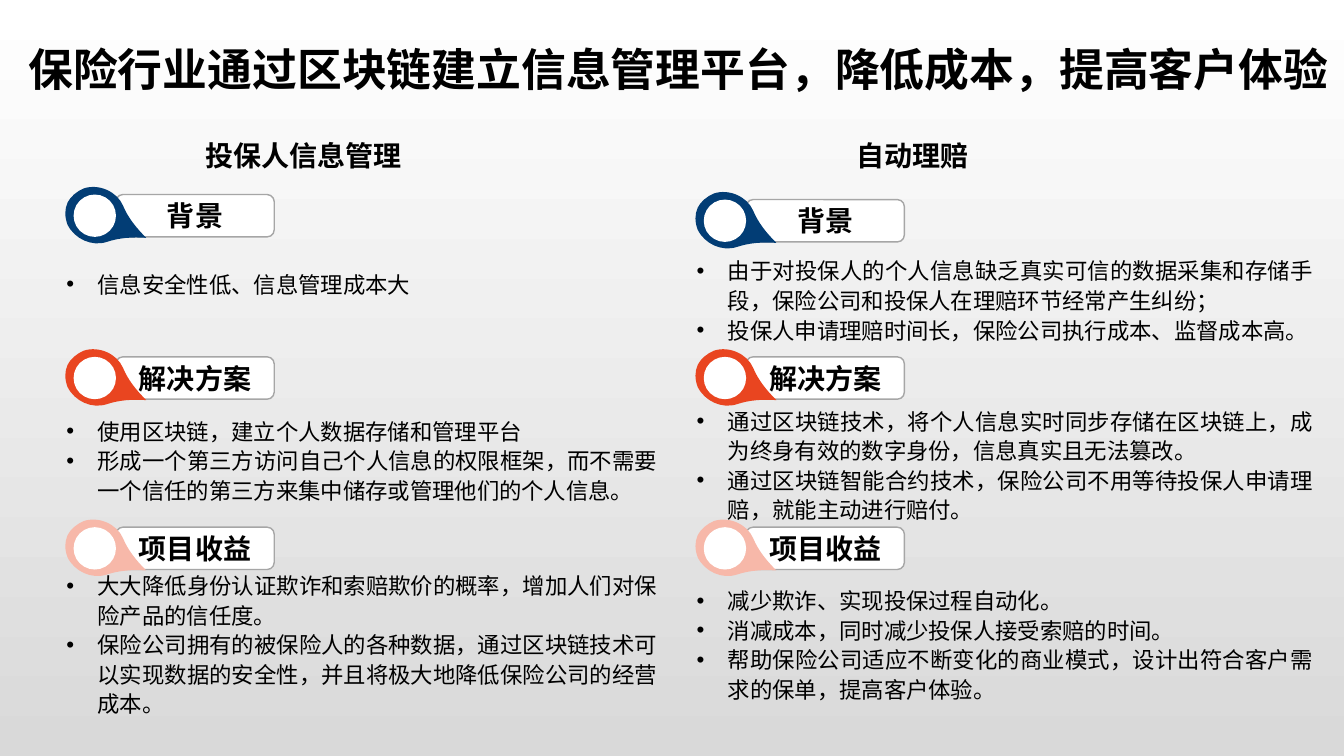
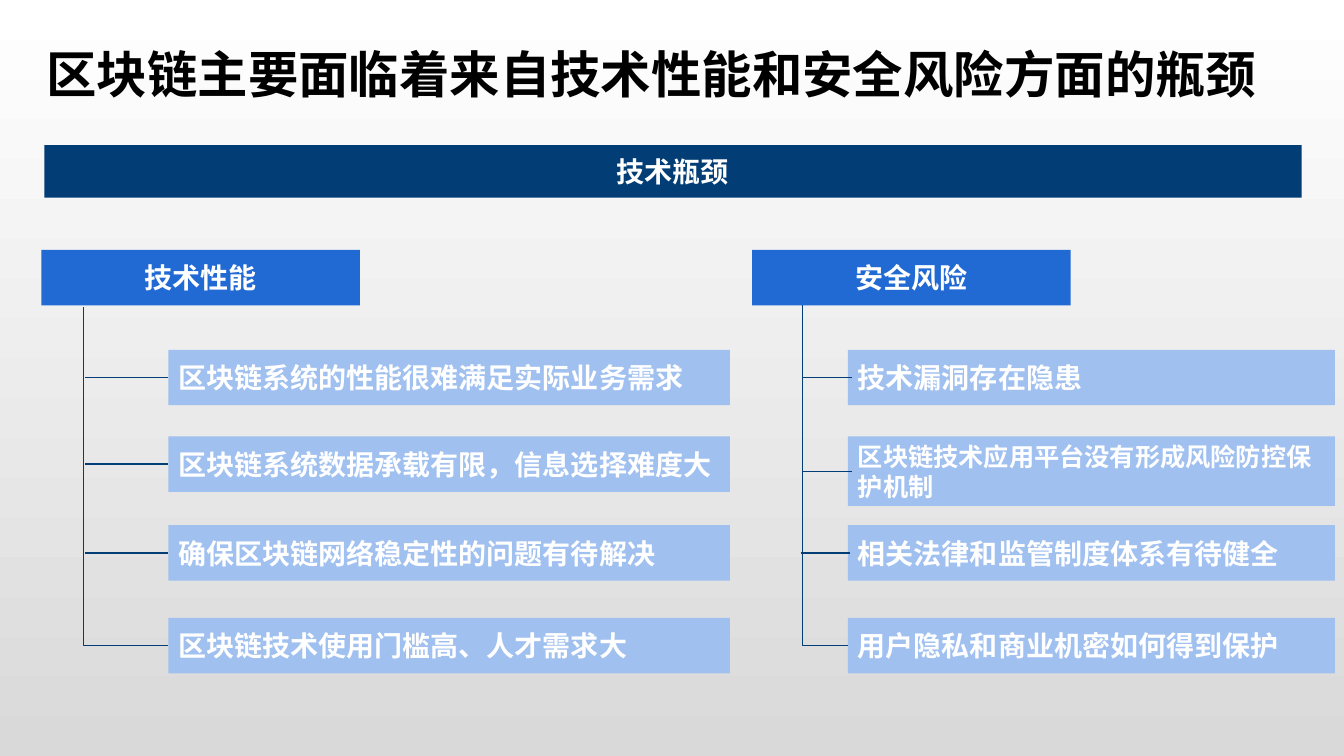
from dataclasses import dataclass

from lxml import etree
from pptx import Presentation
from pptx import util as u
from pptx.dml.color import RGBColor
from pptx.enum import shapes, text
from pptx.oxml.ns import qn


@dataclass(frozen=True)
class Theme:
    font: str = "Noto Sans CJK SC"
    bullet_font: str = "Arial"
    black: str = "000000"
    white: str = "FFFFFF"
    haze: str = "D9D9D9"
    outline: str = "A6A6A6"
    navy: str = "023D75"
    blue: str = "2169D3"
    pale_blue: str = "A0C0F0"
    red: str = "E94520"
    pink: str = "F7B8A9"
    heading: int = 20
    dense: int = 18
    body: int = 16


THEME = Theme()
ALIGN = text.PP_ALIGN
SHAPE = shapes.MSO_SHAPE

DROP_START = (-0.48, 0.08)
DROP_CURVES = [
    ((-0.45, 0.02), (-0.39, -0.03), (-0.32, -0.06)),
    ((-0.17, -0.11), (0.01, -0.03), (0.07, 0.11)),
    ((0.12, 0.23), (0.2, 0.33), (0.3, 0.43)),
    ((0.16, 0.42), (0.03, 0.43), (-0.09, 0.47)),
    ((-0.24, 0.52), (-0.41, 0.44), (-0.48, 0.3)),
    ((-0.51, 0.22), (-0.51, 0.15), DROP_START),
]

SECTIONS = [("背景", THEME.navy), ("解决方案", THEME.red), ("项目收益", THEME.pink)]
USE_CASES = [
    {
        "heading": ("投保人信息管理", 1.94),
        "label_left": 1.15,
        "label_tops": (1.93, 3.54, 5.23),
        "body_left": 0.56,
        "body_width": 6.06,
        "bodies": [
            (2.61, 0.4, ["信息安全性低、信息管理成本大"]),
            (4.07, 0.99, [
                "使用区块链，建立个人数据存储和管理平台",
                "形成一个第三方访问自己个人信息的权限框架，而不需要一个信任的第三方来集中储存或管理他们的个人信息。",
            ]),
            (5.6, 1.58, [
                "大大降低身份认证欺诈和索赔欺价的概率，增加人们对保险产品的信任度。",
                "保险公司拥有的被保险人的各种数据，通过区块链技术可以实现数据的安全性，并且将极大地降低保险公司的经营成本。",
            ]),
        ],
    },
    {
        "heading": ("自动理赔", 8.4),
        "label_left": 7.4,
        "label_tops": (1.98, 3.54, 5.23),
        "body_left": 6.81,
        "body_width": 6.32,
        "bodies": [
            (2.48, 0.99, [
                "由于对投保人的个人信息缺乏真实可信的数据采集和存储手段，保险公司和投保人在理赔环节经常产生纠纷；",
                "投保人申请理赔时间长，保险公司执行成本、监督成本高。",
            ]),
            (3.97, 1.28, [
                "通过区块链技术，将个人信息实时同步存储在区块链上，成为终身有效的数字身份，信息真实且无法篡改。",
                "通过区块链智能合约技术，保险公司不用等待投保人申请理赔，就能主动进行赔付。",
            ]),
            (5.75, 1.28, [
                "减少欺诈、实现投保过程自动化。",
                "消减成本，同时减少投保人接受索赔的时间。",
                "帮助保险公司适应不断变化的商业模式，设计出符合客户需求的保单，提高客户体验。",
            ]),
        ],
    },
]

CARD_TOPS = (3.47, 4.33, 5.21, 6.13)
CARD_HEIGHT = 0.55
TALL_CARD_HEIGHT = 0.69
BOTTLENECKS = [
    {
        "heading": ("技术性能", 0.41),
        "trunk": (0.83, 3.05),
        "cards": (1.67, 5.57),
        "twigs": [(1.67, 0.84)] * 3,
        "issues": [
            ("区块链系统的性能很难满足实际业务需求", CARD_HEIGHT, THEME.heading),
            ("区块链系统数据承载有限，信息选择难度大", CARD_HEIGHT, THEME.heading),
            ("确保区块链网络稳定性的问题有待解决", CARD_HEIGHT, THEME.heading),
            ("区块链技术使用门槛高、人才需求大", CARD_HEIGHT, THEME.heading),
        ],
    },
    {
        "heading": ("安全风险", 7.46),
        "trunk": (7.96, 3.03),
        "cards": (8.41, 4.83),
        "twigs": [(8.45, 7.96), (8.45, 7.96), (8.43, 7.94)],
        "issues": [
            ("技术漏洞存在隐患", CARD_HEIGHT, THEME.heading),
            ("区块链技术应用平台没有形成风险防控保护机制", TALL_CARD_HEIGHT, THEME.dense),
            ("相关法律和监管制度体系有待健全", CARD_HEIGHT, THEME.heading),
            ("用户隐私和商业机密如何得到保护", CARD_HEIGHT, THEME.heading),
        ],
    },
]


def color(code):
    return RGBColor.from_string(code)


def inches(*lengths):
    return [u.Inches(length) for length in lengths]


def add_run(paragraph, words, size, ink=THEME.black, bold=True):
    run = paragraph.add_run()
    run.text = words
    run.font.size = u.Pt(size)
    run.font.bold = bold
    run.font.color.rgb = color(ink)
    run.font.name = THEME.font
    etree.SubElement(run.font._element, qn("a:ea"), typeface=THEME.font)


def paint(shape, fill, outline=None):
    shape.shadow.inherit = False
    shape.fill.solid()
    shape.fill.fore_color.rgb = color(fill)
    if outline:
        shape.line.color.rgb = color(outline)
        shape.line.width = u.Pt(1)
    else:
        shape.line.fill.background()


def add_panel(slide, kind, box, fill, words="", size=THEME.heading,
              ink=THEME.white, align=ALIGN.CENTER, outline=None):
    panel = slide.shapes.add_shape(kind, *inches(*box))
    paint(panel, fill, outline)
    if words:
        frame = panel.text_frame
        frame.word_wrap = True
        frame.vertical_anchor = text.MSO_ANCHOR.MIDDLE
        frame.paragraphs[0].alignment = align
        add_run(frame.paragraphs[0], words, size, ink)


def add_line(slide, start, end, kind=shapes.MSO_CONNECTOR.STRAIGHT):
    line = slide.shapes.add_connector(kind, *inches(*start, *end))
    line.line.color.rgb = color(THEME.navy)
    line.line.width = u.Pt(1)
    etree.SubElement(line._element.spPr, qn("a:effectLst"))
    return line


def add_down_then_right(slide, start, end):
    middle_x, middle_y = ((a + b) / 2 for a, b in zip(start, end))
    half_run, half_drop = ((b - a) / 2 for a, b in zip(start, end))
    elbow = add_line(slide, (middle_x - half_drop, middle_y + half_run),
                     (middle_x + half_drop, middle_y - half_run),
                     shapes.MSO_CONNECTOR.ELBOW)
    props = elbow._element.spPr
    props.find(qn("a:xfrm")).set("rot", str(90 * 60000))
    props.find(qn("a:prstGeom")).set("prst", "bentConnector2")


def add_titled_slide(prs, words, box, size):
    slide = prs.slides.add_slide(prs.slide_layouts[5])
    title = slide.shapes.title
    title.left, title.top, title.width, title.height = inches(*box)
    frame = title.text_frame
    frame.word_wrap = True
    frame.auto_size = text.MSO_AUTO_SIZE.NONE
    frame.vertical_anchor = text.MSO_ANCHOR.TOP
    frame.paragraphs[0].alignment = ALIGN.LEFT
    add_run(frame.paragraphs[0], words, size)
    return slide


def set_bullet(paragraph):
    props = paragraph._p.get_or_add_pPr()
    indent = u.Inches(0.31)
    props.set("marL", str(indent))
    props.set("indent", str(-indent))
    etree.SubElement(props, qn("a:buFont"), typeface=THEME.bullet_font)
    etree.SubElement(props, qn("a:buChar"), char="•")


def add_copy(slide, box, lines, size, bold=False, bulleted=True):
    frame = slide.shapes.add_textbox(*inches(*box)).text_frame
    frame.word_wrap = True
    for index, words in enumerate(lines):
        paragraph = frame.add_paragraph() if index else frame.paragraphs[0]
        paragraph.alignment = ALIGN.JUSTIFY
        paragraph.line_spacing = 1.1
        if bulleted:
            set_bullet(paragraph)
        add_run(paragraph, words, size, bold=bold)


def bend_segments(shape):
    segments = list(shape._element.iter(qn("a:lnTo")))
    for first, second, end in zip(*[iter(segments)] * 3):
        first.tag = qn("a:cubicBezTo")
        for segment in (second, end):
            first.append(segment[0])
            segment.getparent().remove(segment)


def add_drop(slide, left, top, accent):
    def place(point):
        return inches(left + point[0], top + point[1])

    outline = slide.shapes.build_freeform(*place(DROP_START))
    outline.add_line_segments(
        [place(point) for curve in DROP_CURVES for point in curve], close=True)
    drop = outline.convert_to_shape()
    bend_segments(drop)
    paint(drop, accent)


def add_marker(slide, left, top, words, accent):
    add_panel(slide, SHAPE.ROUNDED_RECTANGLE, (left, top, 1.57, 0.42),
              THEME.white, words, ink=THEME.black, outline=THEME.outline)
    add_drop(slide, left, top, accent)
    add_panel(slide, SHAPE.OVAL, (left - 0.42, top, 0.42, 0.42), THEME.white)


def add_use_case(slide, case):
    heading, heading_left = case["heading"]
    add_copy(slide, (heading_left, 1.29, 2.88, 0.47), [heading],
             THEME.heading, bold=True, bulleted=False)
    for (label, accent), top in zip(SECTIONS, case["label_tops"]):
        add_marker(slide, case["label_left"], top, label, accent)
    for top, height, lines in case["bodies"]:
        add_copy(slide, (case["body_left"], top, case["body_width"], height),
                 lines, THEME.body)


def add_bottleneck(slide, branch):
    heading, heading_left = branch["heading"]
    card_left, card_width = branch["cards"]
    add_panel(slide, SHAPE.RECTANGLE, (heading_left, 2.48, 3.16, CARD_HEIGHT),
              THEME.blue, heading)
    middles = []
    for top, (issue, height, size) in zip(CARD_TOPS, branch["issues"]):
        add_panel(slide, SHAPE.RECTANGLE, (card_left, top, card_width, height),
                  THEME.pale_blue, issue, size, align=ALIGN.LEFT)
        middles.append(top + height / 2)
    add_down_then_right(slide, branch["trunk"], (card_left, middles[-1]))
    for (start, end), middle in zip(branch["twigs"], middles):
        add_line(slide, (start, middle), (end, middle))


def set_background(master):
    fill = master.background.fill
    fill.gradient()
    fill.gradient_angle = 270
    for stop, position, shade in zip(
            fill.gradient_stops, (0, 1), (THEME.white, THEME.haze)):
        stop.position = position
        stop.color.rgb = color(shade)


def main():
    prs = Presentation()
    prs.slide_width, prs.slide_height = inches(13.33, 7.5)
    set_background(prs.slide_master)

    insurance = add_titled_slide(
        prs, "保险行业通过区块链建立信息管理平台，降低成本，提高客户体验",
        (0.18, 0.36, 13.15, 0.64), 32)
    for case in USE_CASES:
        add_use_case(insurance, case)

    challenges = add_titled_slide(
        prs, "区块链主要面临着来自技术性能和安全风险方面的瓶颈",
        (0.36, 0.38, 12.63, 0.71), 36)
    add_panel(challenges, SHAPE.RECTANGLE, (0.44, 1.44, 12.47, 0.52),
              THEME.navy, "技术瓶颈")
    for branch in BOTTLENECKS:
        add_bottleneck(challenges, branch)

    prs.save("out.pptx")


if __name__ == "__main__":
    main()
